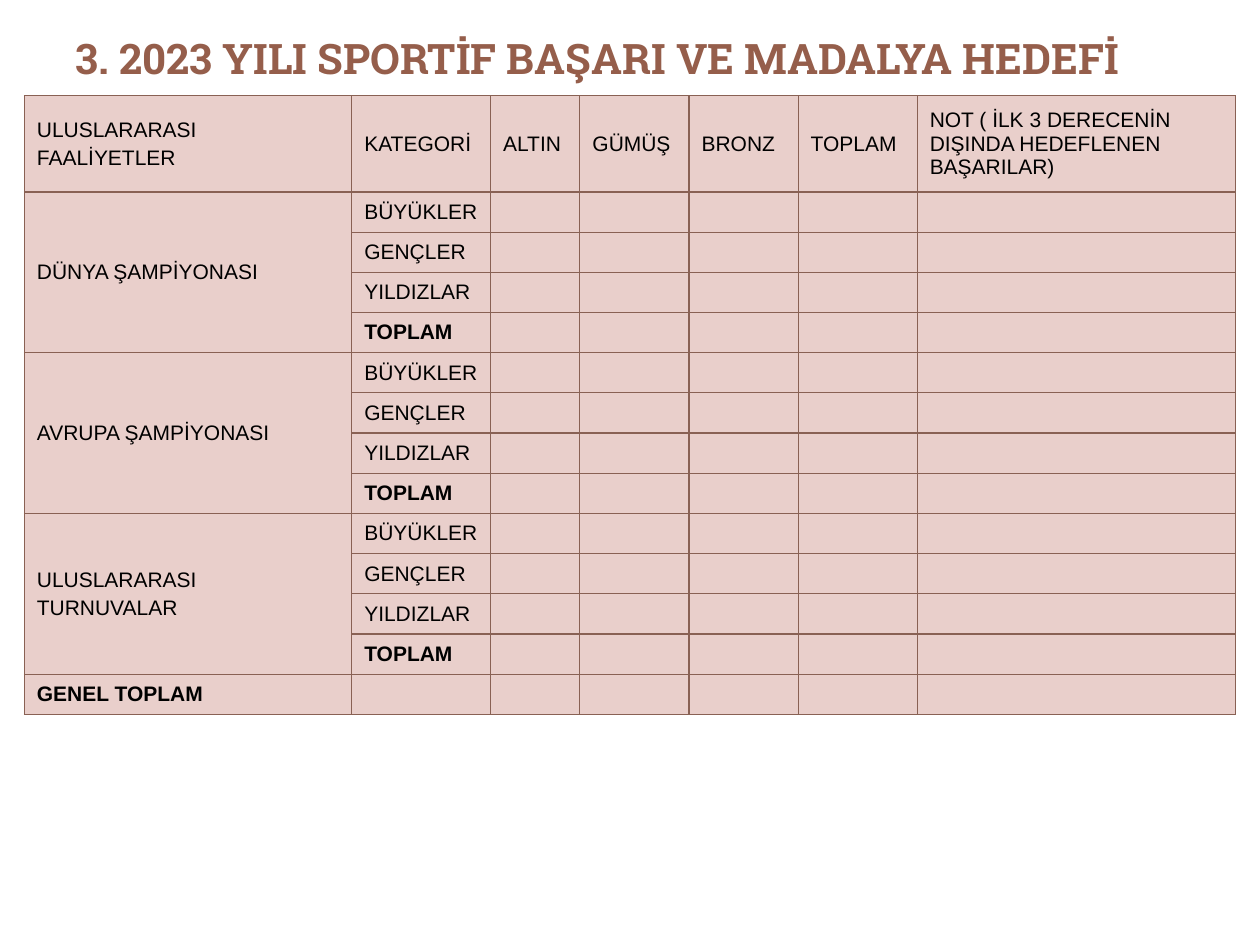
from lxml import etree
from pptx import Presentation
from pptx.dml.color import RGBColor
from pptx.enum.text import MSO_ANCHOR, PP_ALIGN
from pptx.oxml.ns import qn
from pptx.util import Cm, Pt

TOP, MIDDLE, LEFT = MSO_ANCHOR.TOP, MSO_ANCHOR.MIDDLE, PP_ALIGN.LEFT
COLORS = {"title": "955E4B", "text": "000000", "cell": "E9CFCB", "border": "896154"}
TITLE_FONT, BODY_FONT = "Roboto Slab", "Arial"

HEADERS = ["ULUSLARARASI\nFAALİYETLER", "KATEGORİ", "ALTIN", "GÜMÜŞ", "BRONZ", "TOPLAM",
           "NOT ( İLK 3 DERECENİN DIŞINDA HEDEFLENEN BAŞARILAR)"]
EVENTS = ["DÜNYA ŞAMPİYONASI", "AVRUPA ŞAMPİYONASI", "ULUSLARARASI\nTURNUVALAR"]
CATEGORIES = ["BÜYÜKLER", "GENÇLER", "YILDIZLAR", "TOPLAM"]
BOLD = {"TOPLAM", "GENEL TOPLAM"}
COLUMN_WIDTHS = [6.6, 2.8, 1.8, 2.2, 2.2, 2.4, 6.42]
HEADER_HEIGHT, ROW_HEIGHT = 1.94, 0.81


class SlideBuilder:
    """Holds the style and the current slide."""

    def __init__(self, prs):
        self.s = prs.slides.add_slide(prs.slide_layouts[5])

    def add_run(self, p, text, font, size, color, bold):
        r = p.add_run()
        r.text = text
        r.font.name, r.font.size, r.font.bold = font, Pt(size), bold
        r.font.color.rgb = RGBColor.from_string(COLORS[color])

    def title(self, text, left, top, width, height):
        sp = self.s.shapes.title
        sp.left, sp.top, sp.width, sp.height = Cm(left), Cm(top), Cm(width), Cm(height)
        tf = sp.text_frame
        tf.word_wrap, tf.vertical_anchor = True, TOP
        p = tf.paragraphs[0]
        p.alignment = LEFT
        self.add_run(p, text, TITLE_FONT, 24, "title", True)

    def borders(self, cell):
        tc_pr = cell._tc.get_or_add_tcPr()
        for side in ("a:lnL", "a:lnR", "a:lnT", "a:lnB"):
            ln = etree.SubElement(tc_pr, qn(side), w=str(Pt(0.75)))
            fill = etree.SubElement(ln, qn("a:solidFill"))
            etree.SubElement(fill, qn("a:srgbClr"), val=COLORS["border"])

    def cell(self, cell, text, bold):
        self.borders(cell)
        cell.fill.solid()
        cell.fill.fore_color.rgb = RGBColor.from_string(COLORS["cell"])
        cell.vertical_anchor = MIDDLE
        cell.margin_right = Cm(0.2)
        tf = cell.text_frame
        for i, line in enumerate(text.split("\n")):
            p = tf.add_paragraph() if i else tf.paragraphs[0]
            p.space_before = Pt(2.4)
            if line:
                self.add_run(p, line, BODY_FONT, 12, "text", bold)
            else:
                etree.SubElement(p._p, qn("a:endParaRPr"), sz="1200")

    def table(self, rows, left, top, widths, heights):
        shape = self.s.shapes.add_table(len(rows), len(widths), Cm(left), Cm(top),
                                        Cm(sum(widths)), Cm(sum(heights)))
        table = shape.table
        for column, width in zip(table.columns, widths):
            column.width = Cm(width)
        for i, (row, height) in enumerate(zip(rows, heights)):
            table.rows[i].height = Cm(height)
            for j, text in enumerate(row):
                self.cell(table.cell(i, j), text, i > 0 and text in BOLD)
        return table


def main():
    """Build the medal target slide."""
    prs = Presentation()
    prs.slide_width, prs.slide_height = Cm(25.4), Cm(19.05)
    slide = SlideBuilder(prs)
    slide.title("3. 2023 YILI SPORTİF BAŞARI VE MADALYA HEDEFİ", 1.27, 0.53, 24.13, 1.8)

    blanks = [""] * 5
    rows = [HEADERS]
    for event in EVENTS:
        for i, category in enumerate(CATEGORIES):
            rows.append(["" if i else event, category] + blanks)
    rows.append(["GENEL TOPLAM", ""] + blanks)

    heights = [HEADER_HEIGHT] + [ROW_HEIGHT] * (len(rows) - 1)
    table = slide.table(rows, 0.49, 1.93, COLUMN_WIDTHS, heights)
    span = len(CATEGORIES)
    for first in range(1, len(rows) - 1, span):
        table.cell(first, 0).merge(table.cell(first + span - 1, 0))
    prs.save("out.pptx")


if __name__ == "__main__":
    main()
